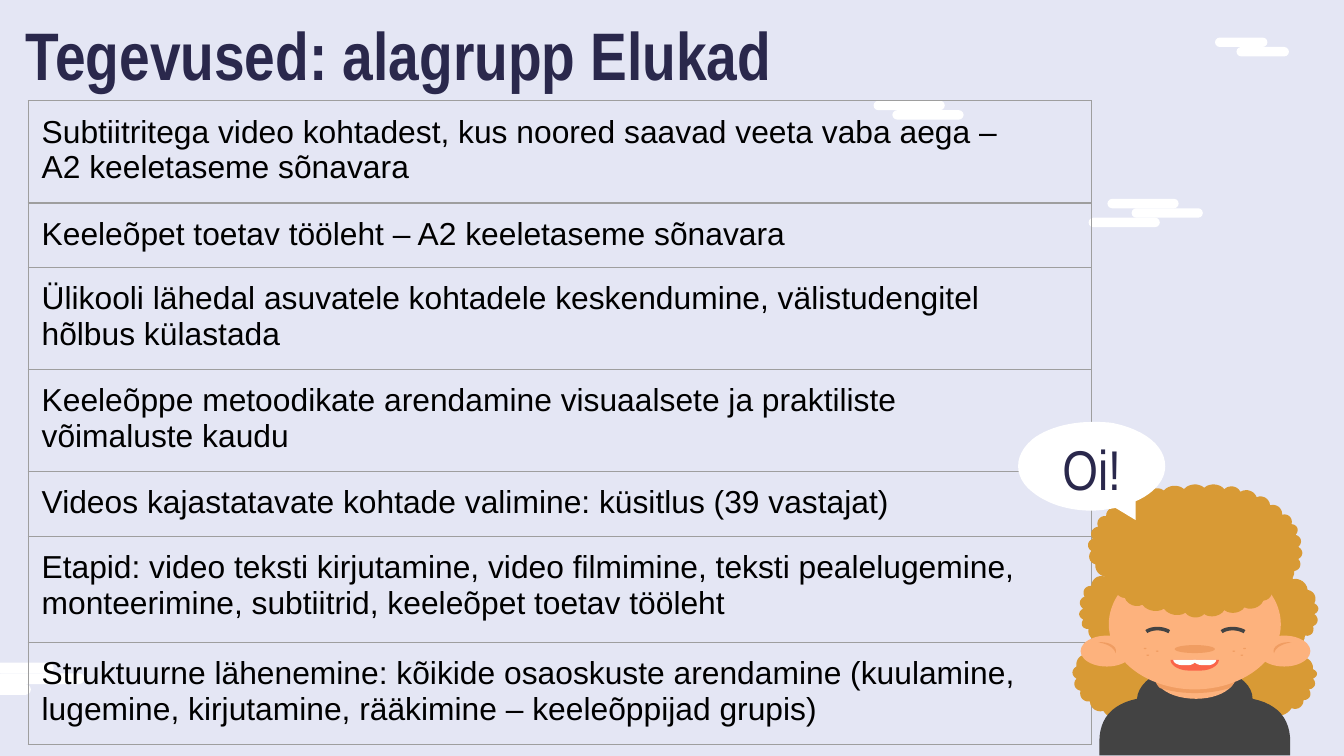
from math import hypot, pi, sin

from lxml.etree import SubElement
from pptx import Presentation
from pptx.dml.color import RGBColor
from pptx.enum.shapes import MSO_SHAPE as SHAPE
from pptx.enum.text import MSO_ANCHOR as ANCHOR, MSO_AUTO_SIZE as AUTO, PP_ALIGN as ALIGN
from pptx.oxml.ns import qn
from pptx.util import Inches, Pt

NAVY, WHITE, HAIR, SKIN, SHADE, DARK = "2A284C", "FFFFFF", "D89A35", "FDB27D", "F09D62", "434343"
LIPS, TEETH, BACKGROUND, GRID, BLACK = "FA6449", "FCFFFF", "E4E6F4", "9E9E9E", "000000"

TITLE = "Tegevused: alagrupp Elukad"
ROWS = [
    (0.76, "Subtiitritega video kohtadest, kus noored saavad veeta vaba aega – \nA2 keeletaseme sõnavara"),
    (0.48, "Keeleõpet toetav tööleht – A2 keeletaseme sõnavara"),
    (0.76, "Ülikooli lähedal asuvatele kohtadele keskendumine, välistudengitel hõlbus külastada"),
    (0.76, "Keeleõppe metoodikate arendamine visuaalsete ja praktiliste \nvõimaluste kaudu"),
    (0.48, "Videos kajastatavate kohtade valimine: küsitlus (39 vastajat)"),
    (0.79, "Etapid: video teksti kirjutamine, video filmimine, teksti pealelugemine, "
           "monteerimine, subtiitrid, keeleõpet toetav tööleht"),
    (0.76, "Struktuurne lähenemine: kõikide osaoskuste arendamine (kuulamine, "
           "lugemine, kirjutamine, rääkimine – keeleõppijad grupis)"),
]
CLOUDS = [
    (0.66, 0.08, [(-0.03, 5.01), (-0.26, 4.93), (-0.43, 5.09)]),
    (0.53, 0.07, [(8.42, 1.55), (8.24, 1.48), (8.1, 1.62), (6.5, 0.75), (6.64, 0.82)]),
    (0.39, 0.07, [(9.2, 0.35), (9.04, 0.28)]),
]
BACK_HAIR = [
    (8.32, 4.16), (8.22, 4.29), (8.12, 4.36), (8.07, 4.44), (8.06, 4.53), (8.06, 4.61), (8.1, 4.68),
    (8.18, 4.77), (8.09, 4.87), (8.01, 4.96), (8.01, 5.05), (8.04, 5.14), (8.11, 5.22), (8.21, 5.29),
    (8.37, 5.34), (8.88, 5.39), (9.45, 5.32), (9.61, 5.27), (9.7, 5.21), (9.74, 5.13), (9.77, 5.05),
    (9.77, 4.98), (9.68, 4.89), (9.61, 4.81), (9.71, 4.73), (9.77, 4.66), (9.78, 4.57), (9.78, 4.49),
    (9.73, 4.39), (9.62, 4.31), (9.49, 4.16),
]
FRONT_HAIR = [
    (8.96, 3.63), (8.81, 3.64), (8.66, 3.65), (8.53, 3.68), (8.43, 3.72), (8.32, 3.78), (8.23, 3.84),
    (8.17, 3.92), (8.13, 4.01), (8.12, 4.1), (8.15, 4.2), (8.24, 4.29), (8.3, 4.35), (8.37, 4.45),
    (8.5, 4.5), (8.66, 4.53), (8.82, 4.56), (8.96, 4.57), (9.11, 4.54), (9.26, 4.52), (9.4, 4.47),
    (9.46, 4.37), (9.54, 4.33), (9.63, 4.25), (9.66, 4.16), (9.66, 4.07), (9.64, 3.98), (9.61, 3.9),
    (9.54, 3.83), (9.45, 3.76), (9.35, 3.7), (9.23, 3.66), (9.11, 3.64),
]
BODY = [
    (8.89, 4.95), (8.66, 4.95, 8.47, 5.06, 8.46, 5.2), (8.27, 5.24, 8.18, 5.35, 8.18, 5.52),
    (8.18, 5.62), (9.6, 5.62), (9.6, 5.52), (9.6, 5.35, 9.51, 5.24, 9.32, 5.2),
    (9.32, 5.06, 9.12, 4.95, 8.89, 4.95),
]
NECK = [(8.59, 4.96), (8.59, 5.02), (8.59, 5.12, 8.72, 5.2, 8.9, 5.2), (9.07, 5.2, 9.2, 5.12, 9.2, 5.02),
        (9.2, 4.96)]
NECK_SHADE = [(8.59, 4.96), (8.59, 5.02), (8.59, 5.06, 8.6, 5.09, 8.63, 5.12),
              (8.79, 5.17, 8.99, 5.17, 9.15, 5.12), (9.18, 5.09, 9.2, 5.06, 9.2, 5.02), (9.2, 4.96)]
MOUTH = [(8.71, 4.91), (8.71, 4.95, 8.77, 4.99, 8.85, 4.99), (8.93, 4.99), (9.01, 4.99, 9.07, 4.95, 9.07, 4.91)]
TOOTH = [(8.73, 4.91), (8.73, 4.93, 8.76, 4.95, 8.8, 4.95), (8.84, 4.95), (8.87, 4.95, 8.9, 4.93, 8.9, 4.91)]
EYE = [(8.53, 4.7), (8.57, 4.67, 8.65, 4.67, 8.7, 4.7)]
RIGHT_FOLD = [(9.61, 4.78), (9.52, 4.77, 9.46, 4.82, 9.48, 4.86), (9.49, 4.82, 9.54, 4.79, 9.61, 4.78)]
LEFT_FOLD = [(8.17, 4.78), (8.26, 4.77, 8.32, 4.82, 8.3, 4.86), (8.29, 4.82, 8.24, 4.79, 8.17, 4.78)]
BUBBLE = [
    (8.12, 3.14), (7.95, 3.14, 7.78, 3.19, 7.68, 3.27), (7.54, 3.39, 7.54, 3.55, 7.68, 3.66),
    (7.79, 3.75, 7.95, 3.8, 8.12, 3.8), (8.18, 3.8, 8.24, 3.79, 8.3, 3.78), (8.45, 3.87), (8.45, 3.73),
    (8.59, 3.67, 8.67, 3.57, 8.67, 3.47), (8.67, 3.32, 8.52, 3.2, 8.29, 3.15),
    (8.24, 3.14, 8.18, 3.14, 8.12, 3.14),
]
FRECKLES = [(8.6, 4.84), (8.53, 4.87), (8.51, 4.82), (9.17, 4.84), (9.23, 4.87), (9.25, 4.82)]


def rgb(value):
    return RGBColor.from_string(value)


def paint(sp, color):
    sp.shadow.inherit = False
    sp.fill.solid()
    sp.fill.fore_color.rgb = rgb(color)
    sp.line.fill.background()
    return sp


def preset(kind, box, color):
    return paint(s.shapes.add_shape(kind, *map(Inches, box)), color)


def outline(points, close=True):
    pts = [(Inches(x), Inches(y)) for x, y in points]
    fb = s.shapes.build_freeform(*pts[0])
    fb.add_line_segments(pts[1:], close=close)
    return fb.convert_to_shape()


def curve(path, dx=0, steps=12):
    pts = [path[0]]
    for seg in path[1:]:
        if len(seg) == 2:
            pts.append(seg)
            continue
        nodes = [pts[-1], seg[:2], seg[2:4], seg[4:]]
        for t in (i / steps for i in range(1, steps + 1)):
            weights = ((1 - t) ** 3, 3 * t * (1 - t) ** 2, 3 * t * t * (1 - t), t ** 3)
            pts.append(tuple(sum(w * n[k] for w, n in zip(weights, nodes)) for k in (0, 1)))
    return [(x + dx, y) for x, y in pts]


def scallops(corners, bulge=0.03, steps=8):
    pts = []
    for (x1, y1), (x2, y2) in zip(corners, corners[1:] + corners[:1]):
        dx, dy = x2 - x1, y2 - y1
        for t in (i / steps for i in range(steps)):
            out = bulge * sin(pi * t) ** 0.7 / hypot(dx, dy)
            pts.append((x1 + dx * t - dy * out, y1 + dy * t + dx * out))
    return pts


def write(tf, text, size, font, color, bold=False, align=ALIGN.LEFT):
    p = tf.paragraphs[0]
    p.text = text
    p.alignment = align
    for r in p.runs:
        for name, value in {"size": Pt(size), "name": font, "bold": bold}.items():
            setattr(r.font, name, value)
        r.font.color.rgb = rgb(color)


def frame(tf, anchor, top=0.1):
    values = {"margin_left": Inches(0.1), "margin_right": Inches(0.1), "margin_top": Inches(top),
              "margin_bottom": Inches(0.1), "vertical_anchor": anchor, "word_wrap": True,
              "auto_size": AUTO.NONE}
    for name, value in values.items():
        setattr(tf, name, value)


def border(cell):
    tc_pr = cell._tc.get_or_add_tcPr()
    for i, side in enumerate(("lnL", "lnR", "lnT", "lnB")):
        ln = SubElement(tc_pr, qn(f"a:{side}"), w=str(Pt(0.75)))
        SubElement(SubElement(ln, qn("a:solidFill")), qn("a:srgbClr"), val=GRID)
        tc_pr.insert(i, ln)


prs = Presentation()
prs.slide_width, prs.slide_height = Inches(10), Inches(10 * 9 / 16)
s = prs.slides.add_slide(prs.slide_layouts[5])
s.background.fill.solid()
s.background.fill.fore_color.rgb = rgb(BACKGROUND)

title = s.shapes.title
for name, value in zip(("left", "top", "width", "height"), (0.09, 0, 8.43, 0.67)):
    setattr(title, name, Inches(value))
frame(title.text_frame, ANCHOR.TOP)
write(title.text_frame, TITLE, 36, "Arial Narrow", NAVY, bold=True)

for width, height, places in CLOUDS:
    for x, y in places:
        preset(SHAPE.ROUNDED_RECTANGLE, (x, y, width, height), WHITE).adjustments[0] = 0.5

total = sum(height for height, text in ROWS)
table = s.shapes.add_table(len(ROWS), 1, *map(Inches, (0.21, 0.75, 7.91, total))).table
table.first_row = table.horz_banding = False
for i, (height, text) in enumerate(ROWS):
    table.rows[i].height = Inches(height)
    cell = table.cell(i, 0)
    for side in ("left", "right", "top", "bottom"):
        setattr(cell, f"margin_{side}", Inches(0.1))
    cell.fill.background()
    border(cell)
    write(cell.text_frame, text, 17, "Arial", BLACK)

paint(outline(scallops(BACK_HAIR)), HAIR)
for path, color in ((BODY, DARK), (NECK, SKIN), (NECK_SHADE, SHADE)):
    paint(outline(curve(path)), color)
preset(SHAPE.OVAL, (8.25, 4.16, 1.28, 0.97), SKIN)
preset(SHAPE.OVAL, (8.74, 4.8, 0.3, 0.06), SHADE)
for dx in (0, 0.56):
    eye = outline(curve(EYE, dx), close=False)
    eye.shadow.inherit = False
    eye.fill.background()
    eye.line.color.rgb = rgb(DARK)
    eye.line.width = Pt(1.92)
for path, dx, color in ((MOUTH, 0, LIPS), (TOOTH, 0, TEETH), (TOOTH, 0.15, TEETH)):
    paint(outline(curve(path, dx)), color)
for x, y in FRECKLES:
    preset(SHAPE.OVAL, (x, y, 0.02, 0.01), SHADE)
paint(outline(scallops(FRONT_HAIR)), HAIR)
for x, fold in ((9.36, RIGHT_FOLD), (8.04, LEFT_FOLD)):
    preset(SHAPE.OVAL, (x, 4.73, 0.39, 0.23), SKIN)
    paint(outline(curve(fold)), SHADE)

bubble = paint(outline(curve(BUBBLE)), WHITE)
frame(bubble.text_frame, ANCHOR.MIDDLE, top=0.05)
write(bubble.text_frame, "Oi!", 30, "Arial Narrow", NAVY, align=ALIGN.CENTER)

prs.save("out.pptx")
